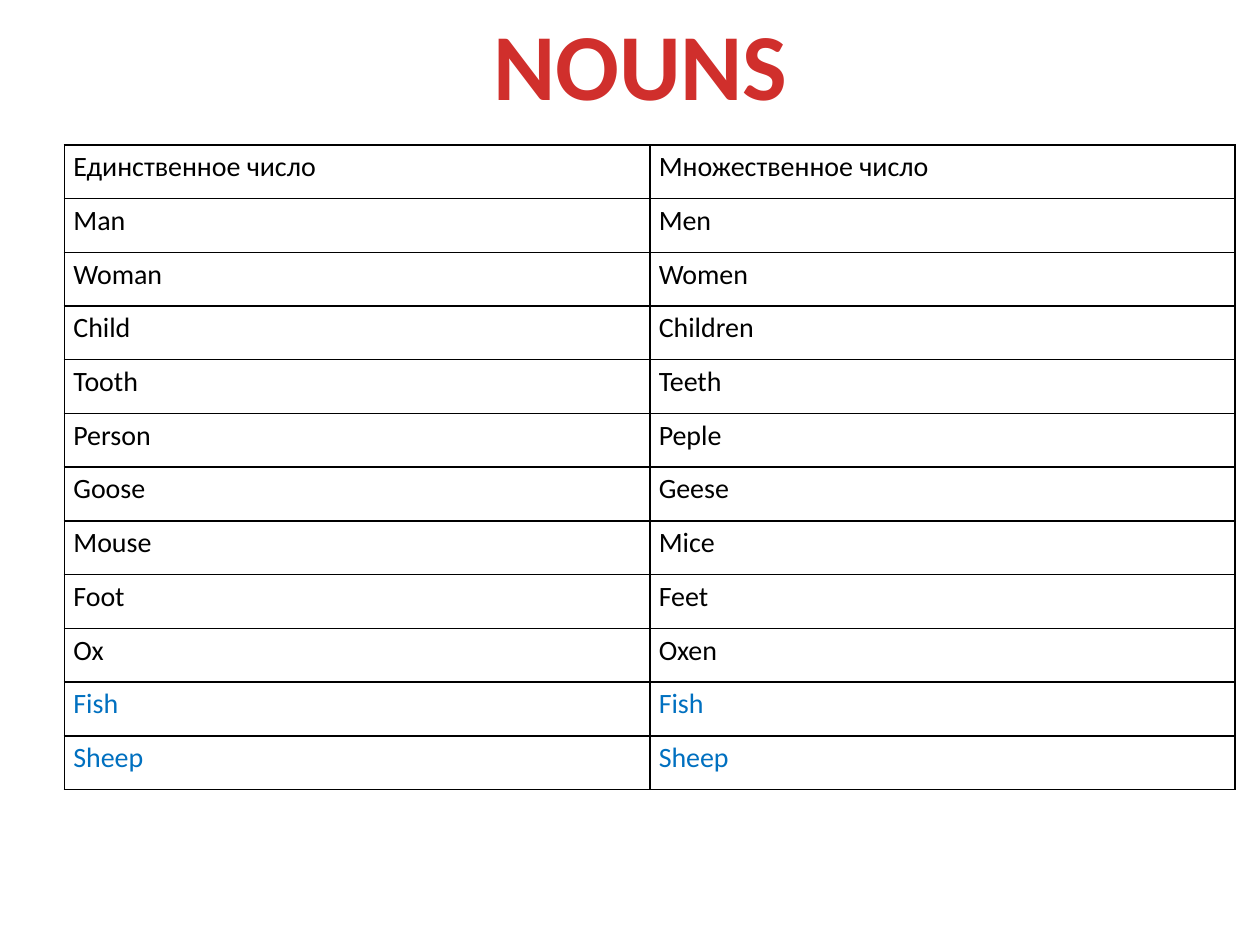
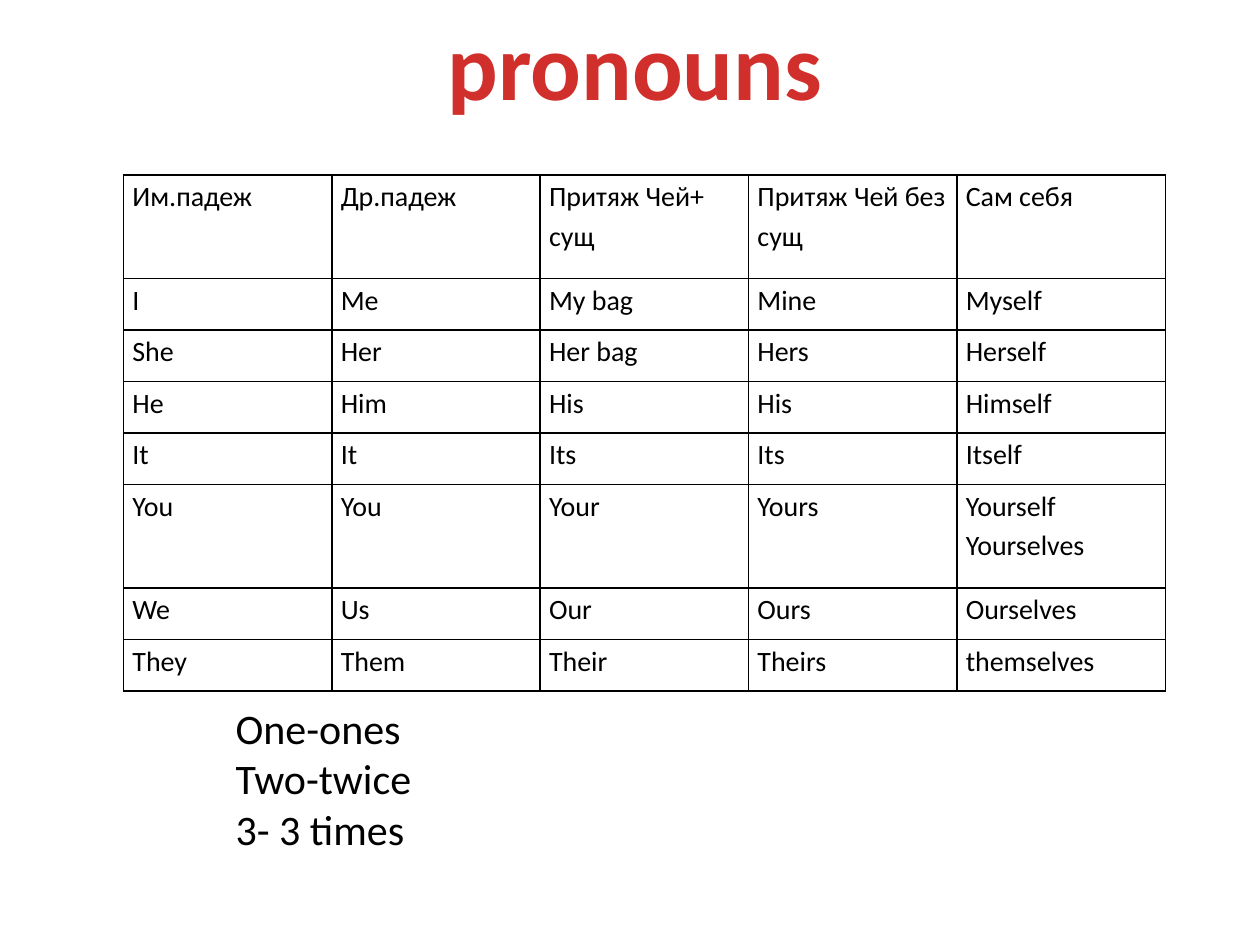
"""Build two grammar slides: irregular nouns and pronoun forms."""
from dataclasses import dataclass
from typing import Any

from lxml import etree
from pptx import Presentation
from pptx.dml.color import RGBColor
from pptx.enum.text import MSO_ANCHOR, MSO_AUTO_SIZE, PP_ALIGN
from pptx.oxml.ns import qn
from pptx.util import Cm, Pt

TOP, MIDDLE = MSO_ANCHOR.TOP, MSO_ANCHOR.MIDDLE
FIT_SHAPE = MSO_AUTO_SIZE.SHAPE_TO_FIT_TEXT
LEFT, CENTER = PP_ALIGN.LEFT, PP_ALIGN.CENTER

RED = RGBColor(0xD0, 0x2F, 0x2C)
BLACK = RGBColor(0x00, 0x00, 0x00)
BLUE = RGBColor(0x00, 0x70, 0xC0)

FONT = "Calibri"
TITLE_FONT = {"name": FONT, "size": Pt(54), "bold": True}
CELL_FONT = {"name": FONT, "size": Pt(16), "bold": False}
NOTE_FONT = {"name": FONT, "size": Pt(24), "bold": False}
CELL_FORMAT = {"margin_left": Cm(0.18), "margin_right": Cm(0.18),
               "margin_top": 0, "margin_bottom": 0, "vertical_anchor": TOP}
PLAIN_TABLE = {"first_row": False, "horz_banding": False}
BORDER_SIDES = ("a:lnL", "a:lnR", "a:lnT", "a:lnB")
TITLE_ONLY_LAYOUT = 5


@dataclass(frozen=True)
class Box:
    """Position and size in centimetres."""
    left: float
    top: float
    width: float
    height: float

    def lengths(self) -> tuple[Cm, Cm, Cm, Cm]:
        """Return the four values as lengths."""
        return Cm(self.left), Cm(self.top), Cm(self.width), Cm(self.height)


@dataclass(frozen=True)
class WordTable:
    """A grid of words, with the rows that are double height or blue."""
    box: Box
    rows: tuple[tuple[str, ...], ...]
    tall_rows: tuple[int, ...] = ()
    blue_rows: tuple[int, ...] = ()


@dataclass(frozen=True)
class Lesson:
    """A titled slide with a word table and an optional note."""
    title: str
    title_box: Box
    table: WordTable
    note: str = ""


NOTE_BOX = Box(4.5, 14.02, 22.1, 3.33)

LESSONS = (
    Lesson("NOUNS", Box(8.31, 0, 9.2, 2.57), WordTable(
        Box(1.3, 2.92, 23.6, 13),
        (("Единственное число", "Множественное число"),
         ("Man", "Men"),
         ("Woman", "Women"),
         ("Child", "Children"),
         ("Tooth", "Teeth"),
         ("Person", "Peple"),
         ("Goose", "Geese"),
         ("Mouse", "Mice"),
         ("Foot", "Feet"),
         ("Ox", "Oxen"),
         ("Fish", "Fish"),
         ("Sheep", "Sheep")),
        blue_rows=(10, 11))),
    Lesson("pronouns", Box(6.1, 0, 13.4, 2.57), WordTable(
        Box(2.49, 3.53, 21, 10.4),
        (("Им.падеж", "Др.падеж", "Притяж Чей+ сущ", "Притяж Чей без сущ", "Сам себя"),
         ("I", "Me", "My bag", "Mine", "Myself"),
         ("She", "Her", "Her bag", "Hers", "Herself"),
         ("He", "Him", "His", "His", "Himself"),
         ("It", "It", "Its", "Its", "Itself"),
         ("You", "You", "Your", "Yours", "Yourself\nYourselves"),
         ("We", "Us", "Our", "Ours", "Ourselves"),
         ("They", "Them", "Their", "Theirs", "themselves")),
        tall_rows=(0, 5)),
        note="One-ones\nTwo-twice\n3- 3 times"),
)


def apply_format(target: Any, values: dict[str, Any]) -> None:
    """Set each named attribute on the target."""
    for name, value in values.items():
        setattr(target, name, value)


def write_text(frame: Any, text: str, font: dict[str, Any], color: RGBColor,
               alignment: Any = LEFT, line_spacing: float = 1.0) -> None:
    """Write one paragraph per line of text in one style."""
    frame.text = text
    for paragraph in frame.paragraphs:
        apply_format(paragraph, {"alignment": alignment, "line_spacing": line_spacing})
        for run in paragraph.runs:
            apply_format(run.font, font)
            run.font.color.rgb = color


def format_frame(frame: Any, anchor: Any) -> None:
    """Wrap the text, fit the shape to it and anchor it."""
    apply_format(frame, {"word_wrap": True, "auto_size": FIT_SHAPE,
                         "vertical_anchor": anchor})


def add_borders(cell: Any) -> None:
    """Give the cell a thin black line on every side."""
    properties = cell._tc.get_or_add_tcPr()
    for side in BORDER_SIDES:
        line = etree.SubElement(properties, qn(side), w=str(Pt(1)))
        fill = etree.SubElement(line, qn("a:solidFill"))
        etree.SubElement(fill, qn("a:srgbClr"), val=str(BLACK))


def add_title(slide: Any, lesson: Lesson) -> None:
    """Place and style the title placeholder."""
    title = slide.shapes.title
    title.left, title.top, title.width, title.height = lesson.title_box.lengths()
    format_frame(title.text_frame, TOP)
    write_text(title.text_frame, lesson.title, TITLE_FONT, RED, CENTER)


def add_word_table(slide: Any, words: WordTable) -> None:
    """Draw the word table with equal columns and rows of one or two units."""
    row_count, column_count = len(words.rows), len(words.rows[0])
    left, top, width, height = words.box.lengths()
    table = slide.shapes.add_table(row_count, column_count, left, top, width, height).table
    apply_format(table, PLAIN_TABLE)
    unit = height // (row_count + len(words.tall_rows))
    for column in table.columns:
        column.width = width // column_count
    for row_index, row_words in enumerate(words.rows):
        table.rows[row_index].height = unit * (2 if row_index in words.tall_rows else 1)
        color = BLUE if row_index in words.blue_rows else BLACK
        for column_index, word in enumerate(row_words):
            cell = table.cell(row_index, column_index)
            apply_format(cell, CELL_FORMAT)
            add_borders(cell)
            cell.fill.background()
            write_text(cell.text_frame, word, CELL_FONT, color, line_spacing=1.15)


def add_note(slide: Any, text: str) -> None:
    """Add the note below the table."""
    frame = slide.shapes.add_textbox(*NOTE_BOX.lengths()).text_frame
    format_frame(frame, MIDDLE)
    write_text(frame, text, NOTE_FONT, BLACK)


def main() -> None:
    """Build and save the presentation."""
    presentation = Presentation()
    presentation.slide_width, presentation.slide_height = Cm(25.4), Cm(19.05)
    layout = presentation.slide_layouts[TITLE_ONLY_LAYOUT]
    for lesson in LESSONS:
        slide = presentation.slides.add_slide(layout)
        add_title(slide, lesson)
        add_word_table(slide, lesson.table)
        if lesson.note:
            add_note(slide, lesson.note)
    presentation.save("out.pptx")


if __name__ == "__main__":
    main()
